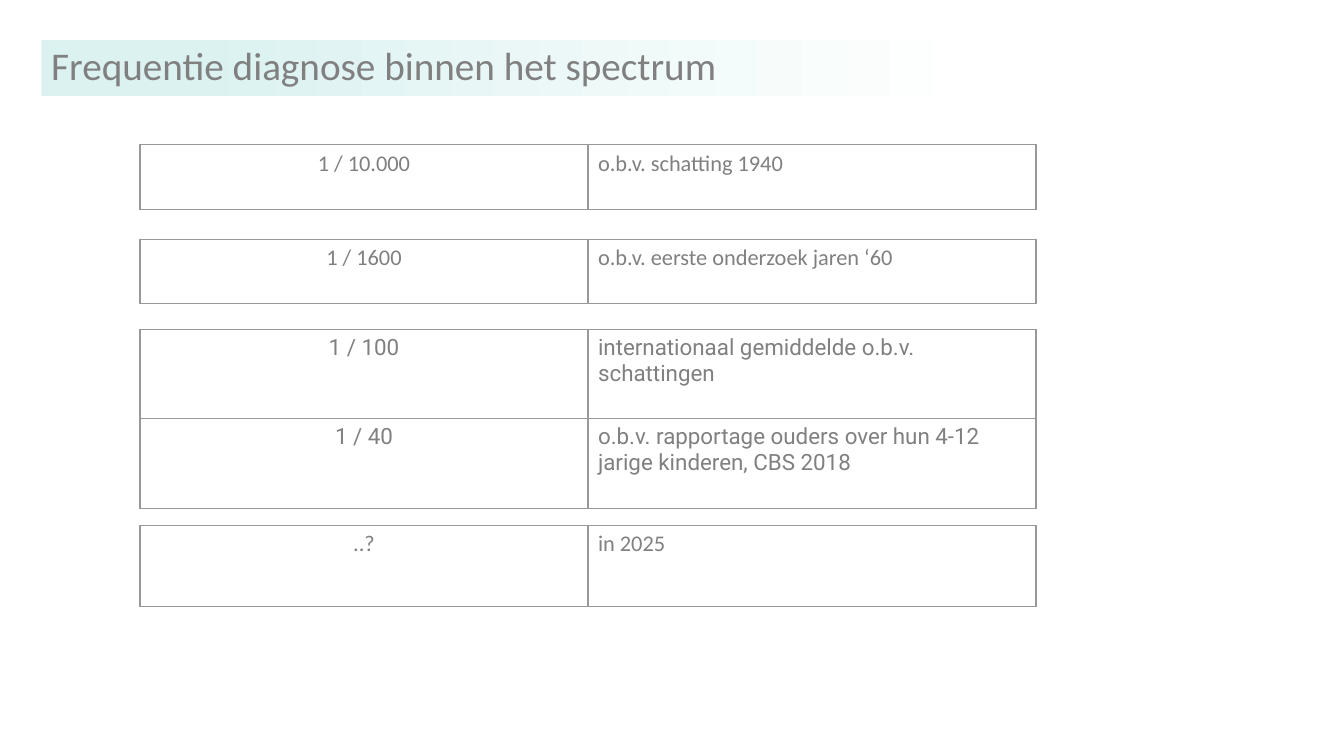
import pptx
import pptx.util
import pptx.dml.color
import pptx.enum.shapes
import pptx.enum.text
import pptx.oxml
import pptx.oxml.ns

Pt = pptx.util.Pt
RGB = pptx.dml.color.RGBColor.from_string
ALIGN = pptx.enum.text.PP_ALIGN

COLORS = {"text": "808080", "border": "989898", "mint": "DBF2F0", "white": "FFFFFF"}


def write_text(text_frame, text, font_name, size, alignment):
    paragraph = text_frame.paragraphs[0]
    paragraph.text = text
    paragraph.alignment = alignment
    font = paragraph.runs[0].font
    for name, value in {"name": font_name, "size": Pt(size), "bold": False}.items():
        setattr(font, name, value)
    font.color.rgb = RGB(COLORS["text"])
    return paragraph


def add_borders(cell):
    properties = cell._tc.get_or_add_tcPr()
    for side in ("lnL", "lnR", "lnT", "lnB"):
        properties.append(pptx.oxml.parse_xml(
            f'<a:{side} {pptx.oxml.ns.nsdecls("a")} w="{Pt(1)}"><a:solidFill>'
            f'<a:srgbClr val="{COLORS["border"]}"/></a:solidFill></a:{side}>'))


presentation = pptx.Presentation()
presentation.slide_width = Pt(960)
presentation.slide_height = Pt(540)
slide = presentation.slides.add_slide(presentation.slide_layouts[6])

# Title band fading to white
title = slide.shapes.add_shape(
    pptx.enum.shapes.MSO_SHAPE.RECTANGLE, Pt(29.5), Pt(28.8), Pt(858), Pt(39.6))
title.shadow.inherit = False
title.line.fill.background()
title.fill.gradient()
title.fill.gradient_angle = 0
fade = [(0.12, "mint"), (0.78, "white")]
for stop, (position, color) in zip(title.fill.gradient_stops, fade):
    stop.position = position
    stop.color.rgb = RGB(COLORS[color])
title.text_frame.word_wrap = True
title.text_frame.vertical_anchor = pptx.enum.text.MSO_ANCHOR.MIDDLE
heading = write_text(title.text_frame, "Frequentie diagnose binnen het spectrum",
                     "Calibri", 28, ALIGN.LEFT)
heading.line_spacing = 0.9

# One single-row table per estimate: top, height, font, frequency, basis
estimates = [
    (103.4, 46, "Calibri", "1 / 10.000", "o.b.v. schatting 1940"),
    (170.8, 46, "Calibri", "1 / 1600", "o.b.v. eerste onderzoek jaren ‘60"),
    (235.4, 63.5, "Roboto", "1 / 100", "internationaal gemiddelde o.b.v. schattingen"),
    (298.9, 64.5, "Roboto", "1 / 40",
     "o.b.v. rapportage ouders over hun 4-12 jarige kinderen, CBS 2018"),
    (375.4, 58, "Calibri", "..?", "in 2025"),
]
for top, height, font_name, frequency, basis in estimates:
    table = slide.shapes.add_table(1, 2, Pt(100), Pt(top), Pt(640), Pt(height)).table
    table.first_row = False
    table.horz_banding = False
    contents = [(frequency, ALIGN.CENTER), (basis, ALIGN.LEFT)]
    for cell, (text, alignment) in zip(table.rows[0].cells, contents):
        write_text(cell.text_frame, text, font_name, 16, alignment)
        add_borders(cell)
        cell.fill.background()

presentation.save("out.pptx")
